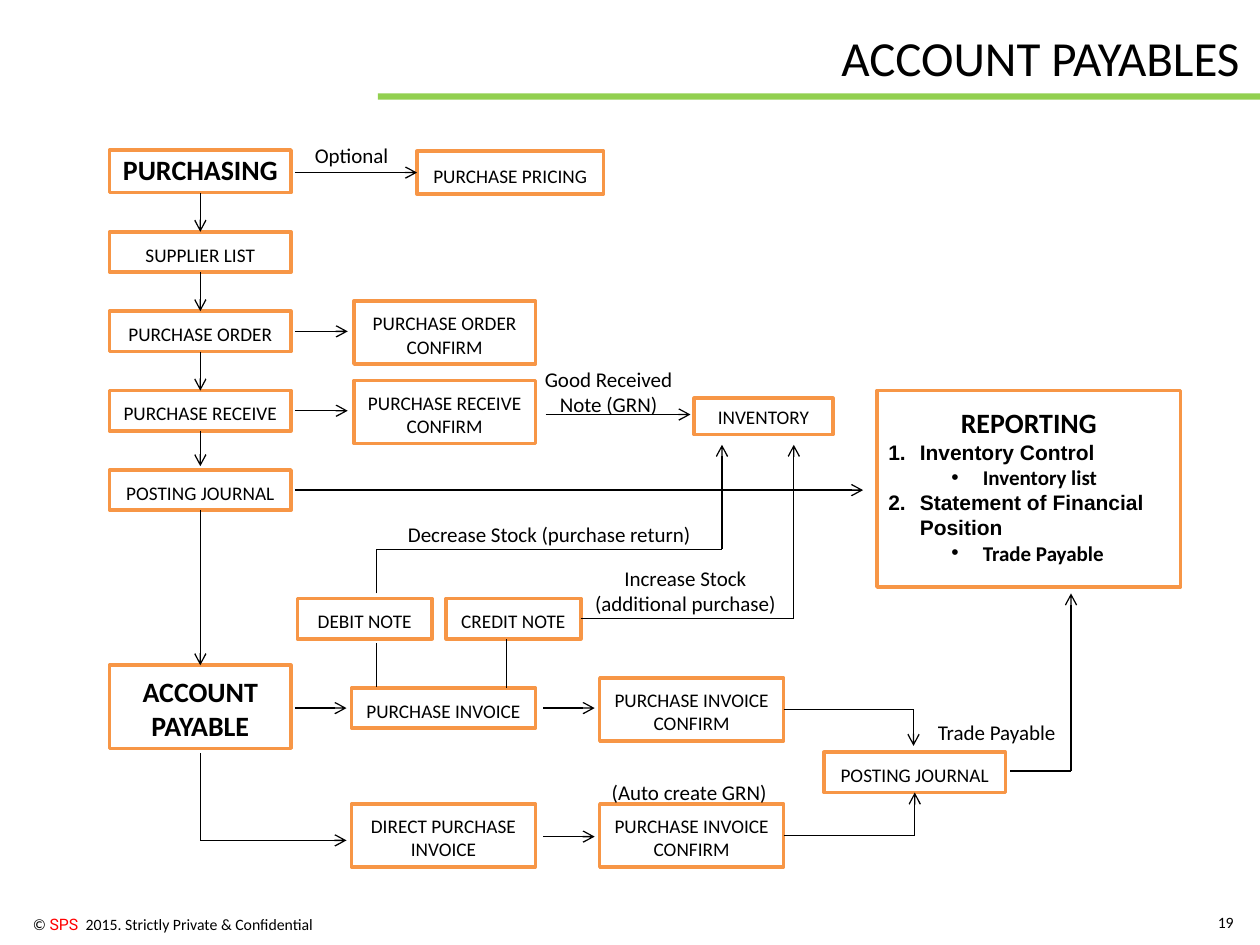
from dataclasses import dataclass

from lxml.etree import SubElement
from pptx import Presentation
from pptx.dml.color import RGBColor
from pptx.enum.shapes import MSO_CONNECTOR, MSO_SHAPE
from pptx.enum.text import MSO_ANCHOR, PP_ALIGN
from pptx.oxml.ns import qn
from pptx.util import Inches, Pt


@dataclass(frozen=True)
class Theme:
    ink: RGBColor = RGBColor(0x00, 0x00, 0x00)
    paper: RGBColor = RGBColor(0xFF, 0xFF, 0xFF)
    border: RGBColor = RGBColor(0xF7, 0x96, 0x46)
    accent: RGBColor = RGBColor(0x92, 0xD0, 0x50)
    alert: RGBColor = RGBColor(0xFF, 0x00, 0x00)
    title: Pt = Pt(28)
    heading: Pt = Pt(16)
    label: Pt = Pt(12)
    step: Pt = Pt(11)
    footer: Pt = Pt(9)


@dataclass(frozen=True)
class Box:
    left: float
    top: float
    width: float
    height: float

    def inner(self, left, top, width, height):
        return Box(self.left + left, self.top + top, width, height)

    def point(self, x, y):
        return self.left + x, self.top + y

    def lengths(self):
        return [Inches(value) for value in (self.left, self.top, self.width, self.height)]


@dataclass(frozen=True)
class Joint:
    shape: object
    side: int


THEME = Theme()
TOP, LEFT, BOTTOM, RIGHT = range(4)
STEP_HEIGHT, CONFIRM_HEIGHT = 0.32, 0.5
STEP_FRAME = {
    "word_wrap": True, "vertical_anchor": MSO_ANCHOR.BOTTOM,
    "margin_left": Inches(0.09), "margin_right": Inches(0.09),
    "margin_top": Inches(0.12), "margin_bottom": Inches(0.05),
}


def apply(target, values):
    for name, value in values.items():
        setattr(target, name, value)


def add_run(paragraph, text, size, color=THEME.ink, **values):
    run = paragraph.add_run()
    run.text = text
    apply(run.font, {"name": "Calibri", "size": size, **values})
    run.font.color.rgb = color


def add_label(slide, box, *lines, size=THEME.label, alignment=PP_ALIGN.CENTER, **frame_values):
    frame = slide.shapes.add_textbox(*box.lengths()).text_frame
    apply(frame, {"word_wrap": True, **frame_values})
    for index, line in enumerate(lines):
        paragraph = frame.add_paragraph() if index else frame.paragraphs[0]
        paragraph.alignment = alignment
        add_run(paragraph, line, size)
    return frame


def add_rectangle(slide, box, fill):
    shape = slide.shapes.add_shape(MSO_SHAPE.RECTANGLE, *box.lengths())
    shape.shadow.inherit = False
    shape.fill.solid()
    shape.fill.fore_color.rgb = fill
    shape.line.fill.background()
    return shape


def add_step(slide, box, text, size=THEME.step, bold=False):
    shape = add_rectangle(slide, box, THEME.paper)
    shape.line.color.rgb = THEME.border
    shape.line.width = Pt(2)
    apply(shape.text_frame, STEP_FRAME)
    paragraph = shape.text_frame.paragraphs[0]
    paragraph.alignment = PP_ALIGN.CENTER
    add_run(paragraph, text, size, bold=bold)
    return shape


def add_link(slide, begin, end, arrow=True):
    ends = [(0, 0) if isinstance(place, Joint) else place for place in (begin, end)]
    lengths = [Inches(value) for point in ends for value in point]
    connector = slide.shapes.add_connector(MSO_CONNECTOR.STRAIGHT, *lengths)
    for place, connect in ((begin, connector.begin_connect), (end, connector.end_connect)):
        if isinstance(place, Joint):
            connect(place.shape, place.side)
    connector.line.color.rgb = THEME.ink
    connector.line.width = Pt(0.75)
    if arrow:
        SubElement(connector.line._get_or_add_ln(), qn("a:tailEnd"), type="arrow")
    SubElement(connector._element.spPr, qn("a:effectLst"))


def add_path(slide, places, arrow=True):
    last = len(places) - 2
    for index, (begin, end) in enumerate(zip(places, places[1:])):
        add_link(slide, begin, end, arrow and index == last)


def build_header(slide, box):
    add_rectangle(slide, box.inner(0, 0.57, box.width, 0.05), THEME.accent)
    add_label(slide, box.inner(3.58, 0, 3.4, 0.57), "ACCOUNT PAYABLES",
              size=THEME.title, alignment=PP_ALIGN.LEFT, word_wrap=False)


def build_footer(slide, box):
    frame = add_label(slide, box.inner(0, 0.09, 2.48, 0.25), "© ",
                      size=THEME.footer, alignment=PP_ALIGN.RIGHT)
    add_run(frame.paragraphs[0], "SPS ", THEME.footer, THEME.alert, name="Roboto")
    add_run(frame.paragraphs[0], " 2015. Strictly Private & Confidential", THEME.footer)
    add_label(slide, box.inner(box.width - 0.4, 0, 0.4, 0.4), "19", size=THEME.footer,
              alignment=PP_ALIGN.RIGHT, vertical_anchor=MSO_ANCHOR.MIDDLE)


def build_purchasing(slide, box):
    purchasing = add_step(slide, box.inner(0, 0.11, 1.44, 0.34), "PURCHASING", THEME.heading, True)
    column = [purchasing]
    names = ("SUPPLIER LIST", "PURCHASE ORDER", "PURCHASE RECEIVE", "POSTING JOURNAL")
    for row, name in enumerate(names):
        top = 0.76 + 0.63 * row
        column.append(add_step(slide, box.inner(0, top, 1.44, STEP_HEIGHT), name))
        if name in ("PURCHASE ORDER", "PURCHASE RECEIVE"):
            add_step(slide, box.inner(1.94, top - 0.08, 1.44, CONFIRM_HEIGHT), f"{name} CONFIRM")
            add_link(slide, box.point(1.47, top + 0.16), box.point(1.89, top + 0.16))
    for upper, lower in zip(column[:3], column[1:4]):
        add_link(slide, Joint(upper, BOTTOM), Joint(lower, TOP))
    add_link(slide, Joint(column[3], BOTTOM), box.point(0.72, 2.62))

    pricing = add_step(slide, box.inner(2.44, 0.12, 1.48, 0.34), "PURCHASE PRICING")
    add_link(slide, box.point(1.47, 0.29), Joint(pricing, LEFT))
    add_step(slide, box.inner(4.64, 2.08, 1.1, 0.29), "INVENTORY")
    add_link(slide, box.point(3.46, 2.21), box.point(4.61, 2.21))
    add_link(slide, box.point(1.47, 2.81), box.point(5.98, 2.81))
    add_label(slide, box.inner(1.41, 0, 1.02, 0.3), "Optional")
    add_label(slide, box.inner(3.29, 1.78, 1.34, 0.5), "Good Received Note (GRN)")
    return column[-1]


def build_payable(slide, box):
    payable = add_step(slide, box.inner(0, 1.19, 1.44, 0.66), "ACCOUNT PAYABLE", THEME.heading, True)
    add_step(slide, box.inner(1.49, 0.66, 1.07, STEP_HEIGHT), "DEBIT NOTE")
    credit = add_step(slide, box.inner(2.67, 0.66, 1.07, STEP_HEIGHT), "CREDIT NOTE")
    add_step(slide, box.inner(1.92, 1.37, 1.46, STEP_HEIGHT), "PURCHASE INVOICE")
    add_step(slide, box.inner(1.92, 2.29, 1.46, CONFIRM_HEIGHT), "DIRECT PURCHASE INVOICE")
    confirm, direct_confirm = [
        add_step(slide, box.inner(3.89, top, 1.46, CONFIRM_HEIGHT), "PURCHASE INVOICE CONFIRM")
        for top in (1.29, 2.29)
    ]
    journal = add_step(slide, box.inner(5.67, 1.88, 1.44, STEP_HEIGHT), "POSTING JOURNAL")

    for x, y in ((1.47, 1.53), (3.44, 1.53), (3.44, 2.55)):
        add_link(slide, box.point(x, y), box.point(x + 0.41, y))
    for x, bottom, top in ((2.12, 1.36, 1.01), (3.15, 1.37, 0.98)):
        add_link(slide, box.point(x, bottom), box.point(x, top), arrow=False)
    add_path(slide, [box.point(2.12, 0.62), box.point(2.12, 0.27),
                     box.point(4.86, 0.27), box.point(4.86, -0.56)])
    add_path(slide, [Joint(credit, RIGHT), box.point(5.43, 0.82), box.point(5.43, -0.56)])
    add_path(slide, [box.point(0.72, 1.89), box.point(0.72, 2.58), box.point(1.88, 2.58)])
    add_path(slide, [Joint(confirm, RIGHT), box.point(6.38, 1.54), box.point(6.38, 1.83)])
    add_path(slide, [Joint(direct_confirm, RIGHT), box.point(6.39, 2.54), Joint(journal, BOTTOM)])
    add_path(slide, [box.point(7.15, 2.03), box.point(7.63, 2.03), box.point(7.63, 0.62)])

    add_label(slide, box.inner(3.7, 0.35, 1.74, 0.5), "Increase Stock", "(additional purchase)")
    add_label(slide, box.inner(2.2, 0, 2.58, 0.3), "Decrease Stock (purchase return)")
    add_label(slide, box.inner(6.37, 1.57, 1.34, 0.3), "Trade Payable")
    add_label(slide, box.inner(3.85, 2.05, 1.5, 0.3), "(Auto create GRN)")
    return payable


def build_reporting(slide, box):
    frame = add_step(slide, box, "REPORTING", THEME.heading, True).text_frame
    frame.vertical_anchor = MSO_ANCHOR.TOP
    entries = (("Inventory Control", 0), ("Inventory list", 1),
               ("Statement of Financial Position", 0), ("Trade Payable", 1))
    for text, level in entries:
        paragraph = frame.add_paragraph()
        apply(paragraph, {"level": level, "alignment": PP_ALIGN.LEFT})
        properties = paragraph._p.get_or_add_pPr()
        properties.set("marL", str(Inches(0.75 if level else 0.25)))
        properties.set("indent", str(Inches(-0.25)))
        SubElement(properties, qn("a:buFont"), typeface="Arial")
        if level:
            SubElement(properties, qn("a:buChar"), char="•")
        else:
            SubElement(properties, qn("a:buAutoNum"), type="arabicPeriod")
        add_run(paragraph, text, THEME.label, bold=True, name="Calibri" if level else "Arial")


def main():
    presentation = Presentation()
    apply(presentation, {"slide_width": Inches(10), "slide_height": Inches(7.5)})
    slide = presentation.slides.add_slide(presentation.slide_layouts[6])
    build_header(slide, Box(3, 0.17, 7, 0.62))
    build_footer(slide, Box(0.1, 7.12, 9.79, 0.4))
    journal = build_purchasing(slide, Box(0.87, 1.08, 5.75, 2.97))
    payable = build_payable(slide, Box(0.87, 4.09, 7.71, 2.79))
    add_link(slide, Joint(journal, BOTTOM), Joint(payable, TOP))
    build_reporting(slide, Box(6.96, 3.1, 2.41, 1.56))
    presentation.save("out.pptx")


if __name__ == "__main__":
    main()
